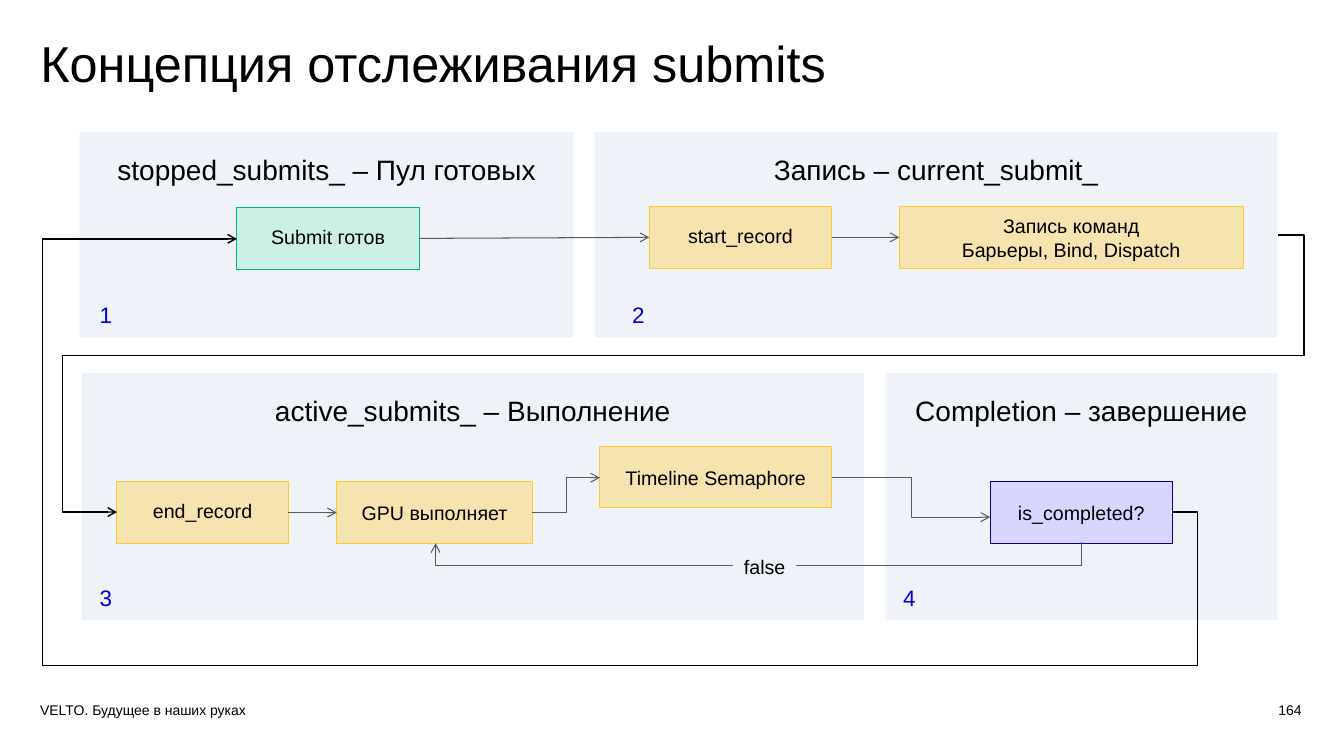
from lxml import etree
from pptx import Presentation
from pptx.dml.color import RGBColor
from pptx.enum import shapes, text
from pptx.oxml import ns
from pptx.util import Inches, Pt

FONT = "Arial"
BLACK, GRAY, BLUE = "000000", "595959", "0000E1"
PANEL = "EFF2F9"
YELLOW = ("F5E4AF", "FFCA2B")
GREEN = ("CCF0E5", "00B57B")
VIOLET = ("D6D6FF", "0000A0")
CENTER, LEFT, RIGHT = (text.PP_ALIGN.CENTER, text.PP_ALIGN.LEFT,
                       text.PP_ALIGN.RIGHT)
TOP, MIDDLE = text.MSO_ANCHOR.TOP, text.MSO_ANCHOR.MIDDLE


def color(value):
    return RGBColor.from_string(value)


def write(shape, content, size=14, ink=BLACK, align=CENTER, anchor=TOP,
          insets=(0, 0, 0, 0), spacing=None):
    """Fill a shape with text; insets are left, top, right, bottom in inches."""
    frame = shape.text_frame
    frame.word_wrap = True
    frame.auto_size = text.MSO_AUTO_SIZE.NONE
    frame.vertical_anchor = anchor
    (frame.margin_left, frame.margin_top,
     frame.margin_right, frame.margin_bottom) = map(Inches, insets)
    frame.text = content
    paragraph = frame.paragraphs[0]
    paragraph.alignment = align
    if spacing:
        paragraph.line_spacing = spacing
    for run in paragraph.runs:
        run.font.name = FONT
        run.font.size = Pt(size)
        run.font.color.rgb = color(ink)


def add_label(slide, content, box, **style):
    write(slide.shapes.add_textbox(*map(Inches, box)), content, **style)


def add_box(slide, content, box, fill, outline=None, **style):
    shape = slide.shapes.add_shape(
        shapes.MSO_SHAPE.RECTANGLE, *map(Inches, box))
    shape.shadow.inherit = False
    shape.fill.solid()
    shape.fill.fore_color.rgb = color(fill)
    if outline:
        shape.line.color.rgb = color(outline)
        shape.line.width = Pt(0.75)
    else:
        shape.line.fill.background()
    write(shape, content, **style)
    return shape


def add_panel(slide, number, number_left, heading, box):
    add_box(slide, heading, box, PANEL, size=20, insets=(0.2,) * 4)
    add_label(slide, number, (number_left, box[1] + box[3] - 0.36, 0.48, 0.25),
              size=16, ink=BLUE)


def add_step(slide, content, box, palette, top=0.2):
    return add_box(slide, content, box, *palette, anchor=MIDDLE,
                   insets=(0.1, top, 0.1, 0.2))


def add_arrow(slide, begin, end, kind=shapes.MSO_CONNECTOR.STRAIGHT,
              ink=GRAY, width=0.75):
    arrow = slide.shapes.add_connector(kind, *map(Inches, (*begin, *end)))
    arrow.line.color.rgb = color(ink)
    arrow.line.width = Pt(width)
    etree.SubElement(arrow.line._get_or_add_ln(), ns.qn("a:tailEnd"),
                     type="arrow")
    etree.SubElement(arrow._element.spPr, ns.qn("a:effectLst"))
    return arrow


def join(slide, source, target):
    """Arrow from the right side of one step to the left side of the next."""
    arrow = add_arrow(slide, (0, 0), (1, 1))
    arrow.begin_connect(source, 3)
    arrow.end_connect(target, 1)


def add_route(slide, begin, end, turns, **style):
    """Elbow arrow; turns holds the alternating x, y, x of its segments."""
    arrow = add_arrow(slide, begin, end, shapes.MSO_CONNECTOR.ELBOW, **style)
    geometry = arrow._element.spPr.find(ns.qn("a:prstGeom"))
    geometry.set("prst", f"bentConnector{len(turns) + 2}")
    guides = geometry.find(ns.qn("a:avLst"))
    if guides is None:
        guides = etree.SubElement(geometry, ns.qn("a:avLst"))
    for index, turn in enumerate(turns):
        axis = index % 2
        share = (turn - begin[axis]) / (end[axis] - begin[axis])
        etree.SubElement(guides, ns.qn("a:gd"), name=f"adj{index + 1}",
                         fmla=f"val {round(share * 100000)}")
    return arrow


def add_feedback(slide):
    """U-shaped return arrow: a horizontal elbow turned by 90 degrees."""
    arrow = add_route(slide, (7.52, 2.18), (7.53, 8.59), [7.75])
    arrow._element.spPr.find(ns.qn("a:xfrm")).set("rot", "5400000")
    add_box(slide, "false", (7.27, 5.5, 0.63, 0.22), PANEL)


def main():
    presentation = Presentation()
    presentation.slide_width = Inches(13.33)
    presentation.slide_height = Inches(7.5)
    slide = presentation.slides.add_slide(presentation.slide_layouts[5])

    title = slide.shapes.title
    title.left, title.top, title.width, title.height = map(
        Inches, (0.4, 0.34, 10.9, 0.83))
    write(title, "Концепция отслеживания submits", size=36, align=LEFT,
          insets=(0, 0.05, 0.1, 0.05), spacing=0.9)
    add_label(slide, "VELTO. Будущее в наших руках", (0.3, 6.91, 2.6, 0.27),
              size=10, align=LEFT, insets=(0.1, 0.05, 0.1, 0.05))
    add_label(slide, "164", (9.61, 6.91, 3.3, 0.4),
              size=10, align=RIGHT, insets=(0.1, 0.05, 0, 0.05))

    for panel in (
        ("1", 0.81, "stopped_submits_ – Пул готовых", (0.79, 1.31, 4.9, 2.04)),
        ("2", 6.09, "Запись – current_submit_", (5.9, 1.31, 6.77, 2.04)),
        ("3", 0.81, "active_submits_ – Выполнение", (0.81, 3.7, 7.76, 2.45)),
        ("4", 8.78, "Completion – завершение", (8.78, 3.7, 3.89, 2.45)),
    ):
        add_panel(slide, *panel)

    ready = add_step(slide, "Submit готов", (2.35, 2.06, 1.81, 0.61), GREEN,
                     top=0.16)
    start = add_step(slide, "start_record", (6.44, 2.05, 1.81, 0.61), YELLOW,
                     top=0.16)
    commands = add_step(slide, "Запись команд\vБарьеры, Bind, Dispatch",
                        (8.92, 2.05, 3.41, 0.61), YELLOW)
    finish = add_step(slide, "end_record", (1.16, 4.78, 1.7, 0.61), YELLOW,
                      top=0.16)
    execute = add_step(slide, "GPU выполняет", (3.34, 4.78, 1.94, 0.61), YELLOW)
    add_step(slide, "Timeline Semaphore", (5.95, 4.43, 2.3, 0.61), YELLOW)
    add_step(slide, "is_completed?", (9.82, 4.78, 1.81, 0.61), VIOLET)

    for source, target in ((ready, start), (start, commands),
                           (finish, execute)):
        join(slide, source, target)
    add_route(slide, (5.28, 5.08), (5.95, 4.74), [5.62])
    add_route(slide, (8.25, 4.74), (9.82, 5.13), [9.04])
    add_feedback(slide)
    add_route(slide, (11.63, 5.08), (2.35, 2.37), [11.88, 6.6, 0.42],
              ink=BLACK, width=1)
    add_route(slide, (12.68, 2.33), (1.16, 5.08), [12.93, 3.53, 0.62],
              ink=BLACK, width=1)

    presentation.save("out.pptx")


if __name__ == "__main__":
    main()
